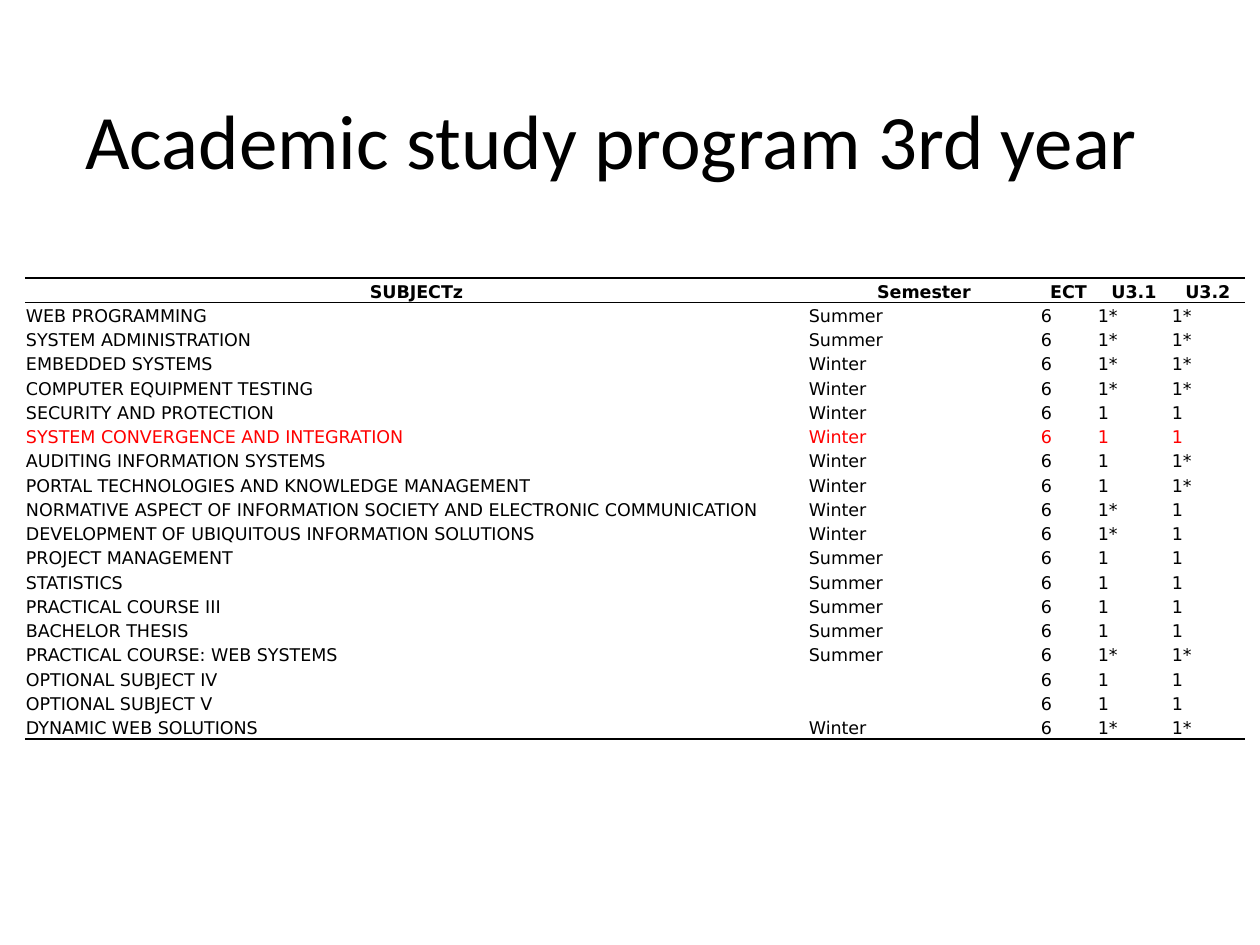
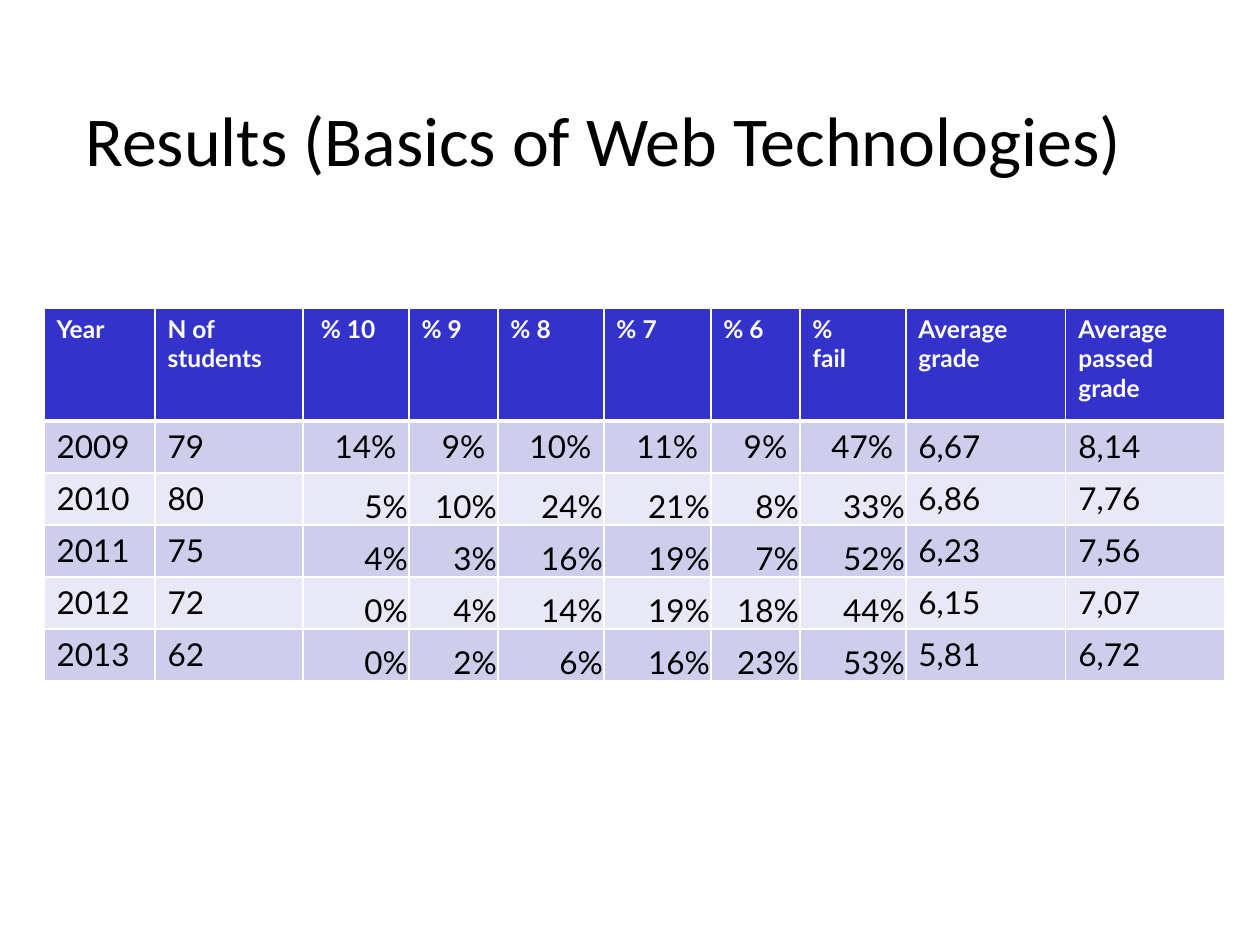
import pptx
import pptx.util
import pptx.dml.color
import pptx.enum.text
import pptx.oxml.ns
import lxml.etree

PX = 914400 // 126
RGB = pptx.dml.color.RGBColor
BLACK = RGB(0, 0, 0)
WHITE = RGB(0xFF, 0xFF, 0xFF)
RED = RGB(0xFF, 0, 0)
BLUE = RGB(0x33, 0x33, 0xCC)
BANDS = RGB(0xCE, 0xCE, 0xEC), RGB(0xE8, 0xE8, 0xF6)
PLAIN = "{2D5ABB26-0587-4C30-8999-92F81FD0307C}"  # no style, no grid
ALIGN = pptx.enum.text.PP_ALIGN
ANCHOR = pptx.enum.text.MSO_ANCHOR
qn = pptx.oxml.ns.qn

deck = pptx.Presentation()
deck.slide_width = 1260 * PX
deck.slide_height = 945 * PX


def add_page(title, size, left, top, cols, rows):
    """Add a slide with its title and an unstyled table; return the table."""
    page = deck.slides.add_slide(deck.slide_layouts[6])
    box = page.shapes.add_textbox(73 * PX, 66 * PX, 1124 * PX, 145 * PX)
    frame = box.text_frame
    frame.word_wrap = True
    frame.vertical_anchor = ANCHOR.MIDDLE
    para = frame.paragraphs[0]
    para.text = title
    para.font.size = pptx.util.Pt(size)
    para.font.name = "Calibri"
    para.font.color.rgb = BLACK

    grid = page.shapes.add_table(len(rows), len(cols), left * PX, top * PX,
                                 sum(cols) * PX, int(sum(rows) * PX)).table
    grid.first_row = grid.horz_banding = False
    grid._tbl.tblPr.find(qn("a:tableStyleId")).text = PLAIN
    for col, width in zip(grid.columns, cols):
        col.width = width * PX
    for row, height in zip(grid.rows, rows):
        row.height = int(height * PX)
    return grid


def fill_cell(cell, text, font, size, color, bold, align, tight, lines, fill=None):
    """Write one cell; lines maps a side (L, R, T, B) to (colour, points)."""
    if tight:
        cell.margin_left = cell.margin_top = cell.margin_right = PX
        cell.margin_bottom = 0
        cell.vertical_anchor = ANCHOR.BOTTOM
    para = cell.text_frame.paragraphs[0]
    para.text = text
    para.alignment = align
    para.font.size = pptx.util.Pt(size)
    para.font.name = font
    para.font.bold = bold
    para.font.color.rgb = color
    if not text:  # keeps an empty cell from stretching its row
        lxml.etree.SubElement(para._p, qn("a:endParaRPr"), sz=str(size * 100))
    props = cell._tc.get_or_add_tcPr()
    for side in "LRTB":
        if side in lines:
            tint, width = lines[side]
            line = lxml.etree.SubElement(props, qn("a:ln" + side),
                                         w=str(pptx.util.Pt(width)))
            solid = lxml.etree.SubElement(line, qn("a:solidFill"))
            lxml.etree.SubElement(solid, qn("a:srgbClr"), val=str(tint))
    if fill is None:
        cell.fill.background()
    else:
        cell.fill.solid()
        cell.fill.fore_color.rgb = fill


# Slide 1: subjects of the third year
SUMMER, WINTER = "Summer", "Winter"
HOT = "SYSTEM CONVERGENCE AND INTEGRATION"
subjects = [
    ("SUBJECTz", "Semester", "ECT", "U3.1", "U3.2"),
    ("WEB PROGRAMMING", SUMMER, "6", "1*", "1*"),
    ("SYSTEM ADMINISTRATION", SUMMER, "6", "1*", "1*"),
    ("EMBEDDED SYSTEMS", WINTER, "6", "1*", "1*"),
    ("COMPUTER EQUIPMENT TESTING", WINTER, "6", "1*", "1*"),
    ("SECURITY AND PROTECTION", WINTER, "6", "1", "1"),
    (HOT, WINTER, "6", "1", "1"),
    ("AUDITING INFORMATION SYSTEMS", WINTER, "6", "1", "1*"),
    ("PORTAL TECHNOLOGIES AND KNOWLEDGE MANAGEMENT", WINTER, "6", "1", "1*"),
    ("NORMATIVE ASPECT OF INFORMATION SOCIETY AND ELECTRONIC COMMUNICATION",
     WINTER, "6", "1*", "1"),
    ("DEVELOPMENT OF UBIQUITOUS INFORMATION SOLUTIONS", WINTER, "6", "1*", "1"),
    ("PROJECT MANAGEMENT", SUMMER, "6", "1", "1"),
    ("STATISTICS", SUMMER, "6", "1", "1"),
    ("PRACTICAL COURSE III", SUMMER, "6", "1", "1"),
    ("BACHELOR THESIS", SUMMER, "6", "1", "1"),
    ("PRACTICAL COURSE: WEB SYSTEMS", SUMMER, "6", "1*", "1*"),
    ("OPTIONAL SUBJECT IV", "", "6", "1", "1"),
    ("OPTIONAL SUBJECT V", "", "6", "1", "1"),
    ("DYNAMIC WEB SOLUTIONS", WINTER, "6", "1*", "1*"),
]
count = len(subjects)
grid = add_page("Academic study program 3rd year", 44, 25, 278,
                [783, 232, 57, 74, 74], [461 / count] * count)
rule = BLACK, 1
for r, row in enumerate(subjects):
    head = r == 0
    lines = {"T": rule, "B": rule} if head else {"B": rule} if r == count - 1 else {}
    for c, text in enumerate(row):
        fill_cell(grid.cell(r, c), text, "DejaVu Sans", 10,
                  RED if row[0] == HOT else BLACK, head,
                  ALIGN.CENTER if head else ALIGN.LEFT, True, lines)

# Slide 2: yearly results
results = [
    ("Year", "N of\vstudents", "% 10", "% 9", "% 8", "% 7", "% 6", "%\vfail",
     "Average grade", "Average passed\vgrade"),
    ("2009", "79", "14%", "9%", "10%", "11%", "9%", "47%", "6,67", "8,14"),
    ("2010", "80", "5%", "10%", "24%", "21%", "8%", "33%", "6,86", "7,76"),
    ("2011", "75", "4%", "3%", "16%", "19%", "7%", "52%", "6,23", "7,56"),
    ("2012", "72", "0%", "4%", "14%", "19%", "18%", "44%", "6,15", "7,07"),
    ("2013", "62", "0%", "2%", "6%", "16%", "23%", "53%", "5,81", "6,72"),
]
grid = add_page("Results (Basics of Web Technologies)", 40, 44, 308,
                [111, 148, 106, 89, 106, 107, 89, 106, 160, 159],
                [113] + [52] * 5)
for r, row in enumerate(results):
    head = r == 0
    lines = dict.fromkeys("LRTB", (WHITE, 1))
    if head:
        lines["B"] = WHITE, 3
    elif r == 1:
        lines["T"] = WHITE, 3
    for c, text in enumerate(row):
        share = not head and 2 <= c <= 7
        fill_cell(grid.cell(r, c), text, "Lato", 14 if head else 18,
                  WHITE if head else BLACK, head,
                  ALIGN.RIGHT if share else ALIGN.LEFT, share and r > 1, lines,
                  BLUE if head else BANDS[(r - 1) % 2])
grid.cell(0, 2).margin_left = 18 * PX

deck.save("out.pptx")
